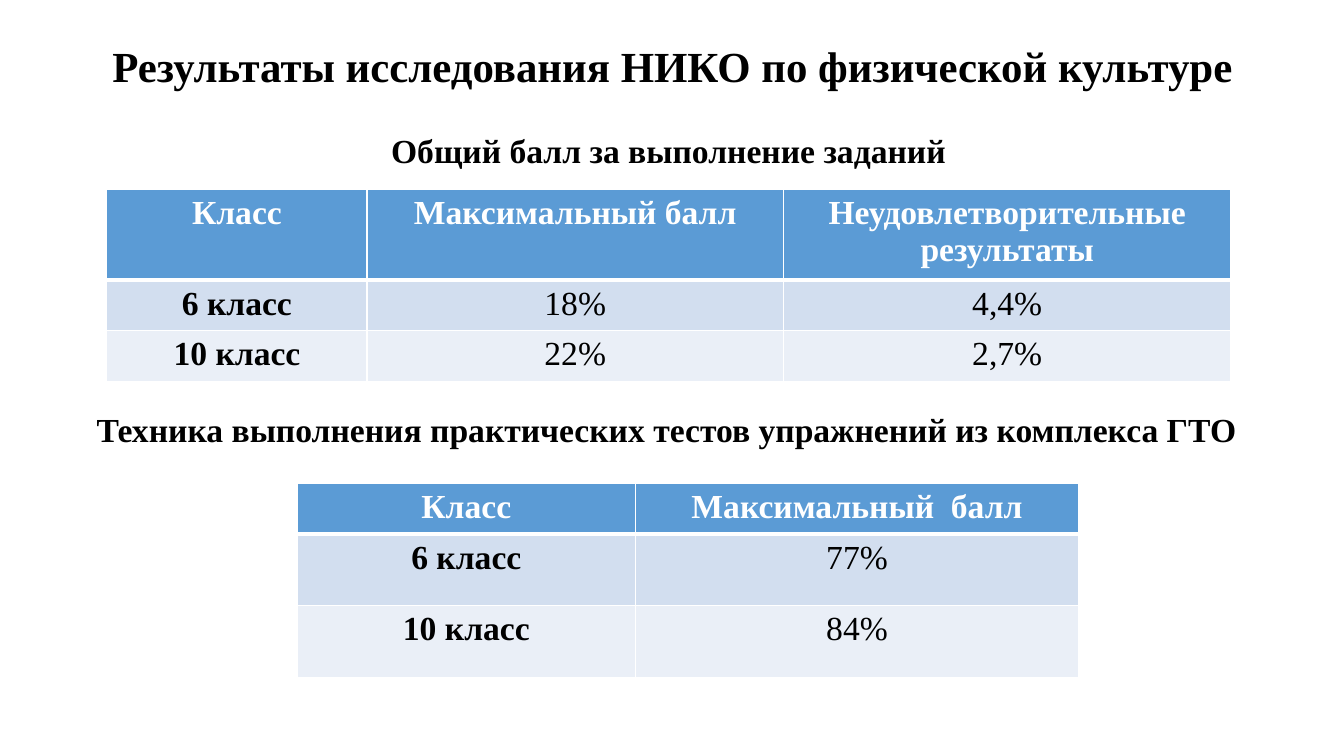
from lxml.etree import SubElement
from pptx import Presentation
from pptx.dml.color import RGBColor
from pptx.enum.text import MSO_ANCHOR, PP_ALIGN
from pptx.oxml.ns import qn
from pptx.util import Pt

PX = 9144  # EMU per px, 100 px to the inch
FONT = "Times New Roman"
BODY_SIZE = 24
COLORS = {
    "text": "000000",
    "white": "FFFFFF",
    "header": "5B9BD5",
    "odd": "D2DEEF",
    "even": "EAEFF7",
}


def color(name):
    return RGBColor.from_string(COLORS[name])


def format_para(para, size, color_name, bold, align):
    para.alignment = align
    for span in para.runs:
        span.font.name = FONT
        span.font.size = Pt(size)
        span.font.bold = bold
        span.font.color.rgb = color(color_name)


def add_heading(page, box, text, size=BODY_SIZE, align=PP_ALIGN.CENTER,
                anchor=MSO_ANCHOR.TOP, line_spacing=0.9, space_before=10):
    frame = page.shapes.add_textbox(*(PX * length for length in box)).text_frame
    frame.word_wrap = True
    frame.vertical_anchor = anchor
    frame.text = text
    para = frame.paragraphs[0]
    para.line_spacing = line_spacing
    para.space_before = Pt(space_before)
    format_para(para, size, "text", True, align)


def add_borders(cell, widths):
    """Draw white borders; widths maps a side (L, R, T, B) to points."""
    properties = cell._tc.get_or_add_tcPr()
    for side, width in widths.items():
        line = SubElement(properties, qn(f"a:ln{side}"), w=str(Pt(width)))
        fill = SubElement(line, qn("a:solidFill"))
        SubElement(fill, qn("a:srgbClr"), val=COLORS["white"])


def add_score_table(page, left, top, widths, heights, rows):
    box = (left, top, sum(widths), sum(heights))
    table = page.shapes.add_table(
        len(rows), len(widths), *(PX * length for length in box)).table
    for column, width in zip(table.columns, widths):
        column.width = PX * width
    for row, height in zip(table.rows, heights):
        row.height = PX * height
    for r, values in enumerate(rows):
        is_header = r == 0
        fill_name = "header" if is_header else "odd" if r % 2 else "even"
        for c, value in enumerate(values):
            cell = table.cell(r, c)
            cell.text = value
            format_para(cell.text_frame.paragraphs[0], BODY_SIZE,
                        "white" if is_header else "text",
                        is_header or c == 0, PP_ALIGN.CENTER)
            add_borders(cell, {"L": 1, "R": 1, "T": 3 if r == 1 else 1,
                               "B": 3 if is_header else 1})
            cell.fill.solid()
            cell.fill.fore_color.rgb = color(fill_name)


def build_results_slide(page):
    add_heading(page, (92, 40, 1150, 57),
                "Результаты исследования НИКО по физической культуре",
                size=30.6, anchor=MSO_ANCHOR.MIDDLE, space_before=0)
    add_heading(page, (350, 128, 626, 48), "Общий балл за выполнение заданий")
    add_score_table(page, 106, 188, (258, 413, 444), (89, 50, 50), [
        ("Класс", "Максимальный балл", "Неудовлетворительные результаты"),
        ("6 класс", "18%", "4,4%"),
        ("10 класс", "22%", "2,7%"),
    ])
    add_heading(page, (86, 393, 1155, 66),
                "Техника выполнения практических тестов упражнений из комплекса ГТО",
                align=PP_ALIGN.JUSTIFY, line_spacing=1.2)
    add_score_table(page, 295, 480, (335, 440), (50, 71, 71), [
        ("Класс", "Максимальный  балл"),
        ("6 класс", "77%"),
        ("10 класс", "84%"),
    ])


def main():
    deck = Presentation()
    deck.slide_width = PX * 1333
    deck.slide_height = PX * 750
    build_results_slide(deck.slides.add_slide(deck.slide_layouts[6]))
    deck.save("out.pptx")


if __name__ == "__main__":
    main()
